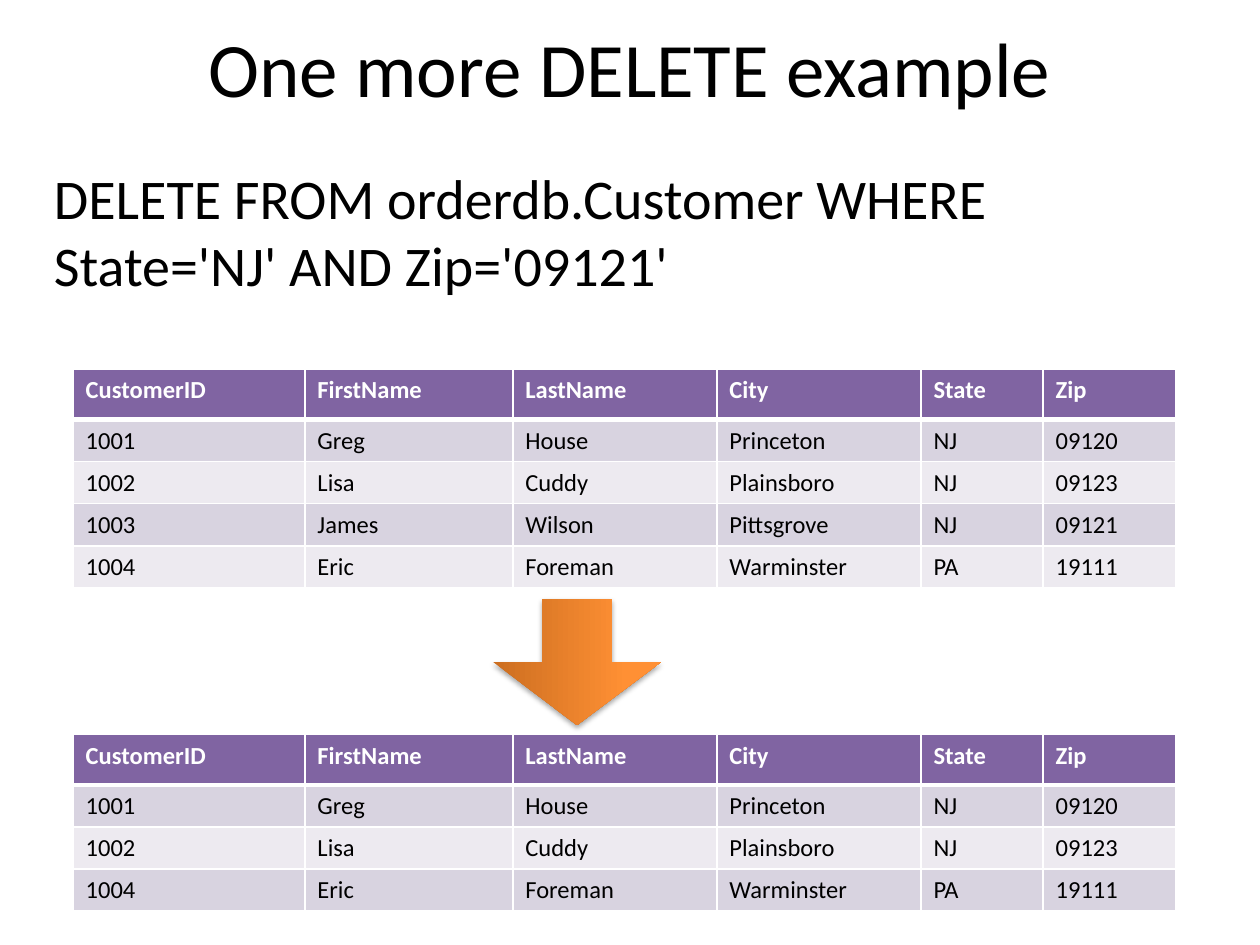
from pptx import Presentation
from pptx.dml.color import RGBColor
from pptx.enum import shapes, text
from pptx.oxml import parse_xml
from pptx.oxml.ns import nsdecls
from pptx.util import Inches, Pt

BLACK = RGBColor(0x00, 0x00, 0x00)
WHITE = RGBColor(0xFF, 0xFF, 0xFF)
PURPLE = RGBColor(0x80, 0x64, 0xA2)
BANDS = [RGBColor(0xD8, 0xD3, 0xE0), RGBColor(0xED, 0xEA, 0xF0)]
RUST = RGBColor(0xCC, 0x6E, 0x20)
ORANGE = RGBColor(0xFF, 0x90, 0x34)
AMBER = RGBColor(0xFF, 0x91, 0x36)


def put(frame, words, size, color=BLACK, bold=False, align=None, before=0):
    para = frame.paragraphs[0]
    para.alignment = align
    para.space_before = Pt(before)
    run = para.add_run()
    run.text = words
    font = run.font
    font.name, font.size, font.bold = "Calibri", Pt(size), bold
    font.color.rgb = color


def edge(cell, side, width):
    cell._tc.get_or_add_tcPr().append(parse_xml(
        f'<a:{side} {nsdecls("a")} w="{Pt(width)}"><a:solidFill>'
        f'<a:srgbClr val="{WHITE}"/></a:solidFill></a:{side}>'))


deck = Presentation()
deck.slide_width, deck.slide_height = Inches(10), Inches(7.5)
slide = deck.slides.add_slide(deck.slide_layouts[5])

# Title
title = slide.shapes.title
title.left, title.top = Inches(0.5), Inches(-0.02)
title.width, title.height = Inches(9), Inches(1.1)
title.text_frame.vertical_anchor = text.MSO_ANCHOR.MIDDLE
put(title.text_frame, "One more DELETE example", 44,
    align=text.PP_ALIGN.CENTER)

# Statement
box = slide.shapes.add_textbox(Inches(0.33), Inches(1.25), Inches(9), Inches(4.95))
box.text_frame.word_wrap = True
put(box.text_frame,
    "DELETE FROM orderdb.Customer WHERE State='NJ' AND Zip='09121'",
    32, before=6.4)

# Tables before and after the deletion
head = ["CustomerID", "FirstName", "LastName", "City", "State", "Zip"]
people = [
    ["1001", "Greg", "House", "Princeton", "NJ", "09120"],
    ["1002", "Lisa", "Cuddy", "Plainsboro", "NJ", "09123"],
    ["1003", "James", "Wilson", "Pittsgrove", "NJ", "09121"],
    ["1004", "Eric", "Foreman", "Warminster", "PA", "19111"],
]
kept = [row for row in people if not (row[4] == "NJ" and row[5] == "09121")]
widths = [1.84, 1.65, 1.62, 1.62, 0.97, 1.05]
top_row, low_row = 0.4, 0.33

for top, body in [(2.93, people), (5.83, kept)]:
    rows = [head] + body
    grid = slide.shapes.add_table(
        len(rows), len(head), Inches(0.58), Inches(top), Inches(sum(widths)),
        Inches(top_row + low_row * len(body))).table
    for col, width in zip(grid.columns, widths):
        col.width = Inches(width)
    for r, row in enumerate(rows):
        first = r == 0
        grid.rows[r].height = Inches(top_row if first else low_row)
        for c, words in enumerate(row):
            cell = grid.cell(r, c)
            for side in ("lnL", "lnR", "lnT", "lnB"):
                thick = (first and side == "lnB") or (r == 1 and side == "lnT")
                edge(cell, side, 3 if thick else 1)
            cell.fill.solid()
            cell.fill.fore_color.rgb = PURPLE if first else BANDS[(r - 1) % 2]
            put(cell.text_frame, words, 14, WHITE if first else BLACK, first)

# Arrow between the tables, turned to point down
arrow = slide.shapes.add_shape(shapes.MSO_SHAPE.RIGHT_ARROW, Inches(4.08),
                               Inches(4.59), Inches(1), Inches(1.33))
arrow.rotation = 90
arrow.adjustments[0], arrow.adjustments[1] = 0.416, 0.5
arrow.line.fill.background()
stops = "".join(
    f'<a:gs pos="{pos * 1000}"><a:srgbClr val="{color}"/></a:gs>'
    for pos, color in [(0, RUST), (80, ORANGE), (100, AMBER)])
props = arrow._element.spPr
props.insert(2, parse_xml(
    f'<a:gradFill {nsdecls("a")} rotWithShape="1"><a:gsLst>{stops}</a:gsLst>'
    '<a:lin ang="16200000" scaled="0"/></a:gradFill>'))
props.append(parse_xml(
    f'<a:effectLst {nsdecls("a")}><a:outerShdw blurRad="{Pt(3.1)}" '
    f'dist="{Pt(1.8)}" dir="5400000" rotWithShape="0"><a:srgbClr val="{BLACK}">'
    '<a:alpha val="35000"/></a:srgbClr></a:outerShdw></a:effectLst>'))

deck.save("out.pptx")
